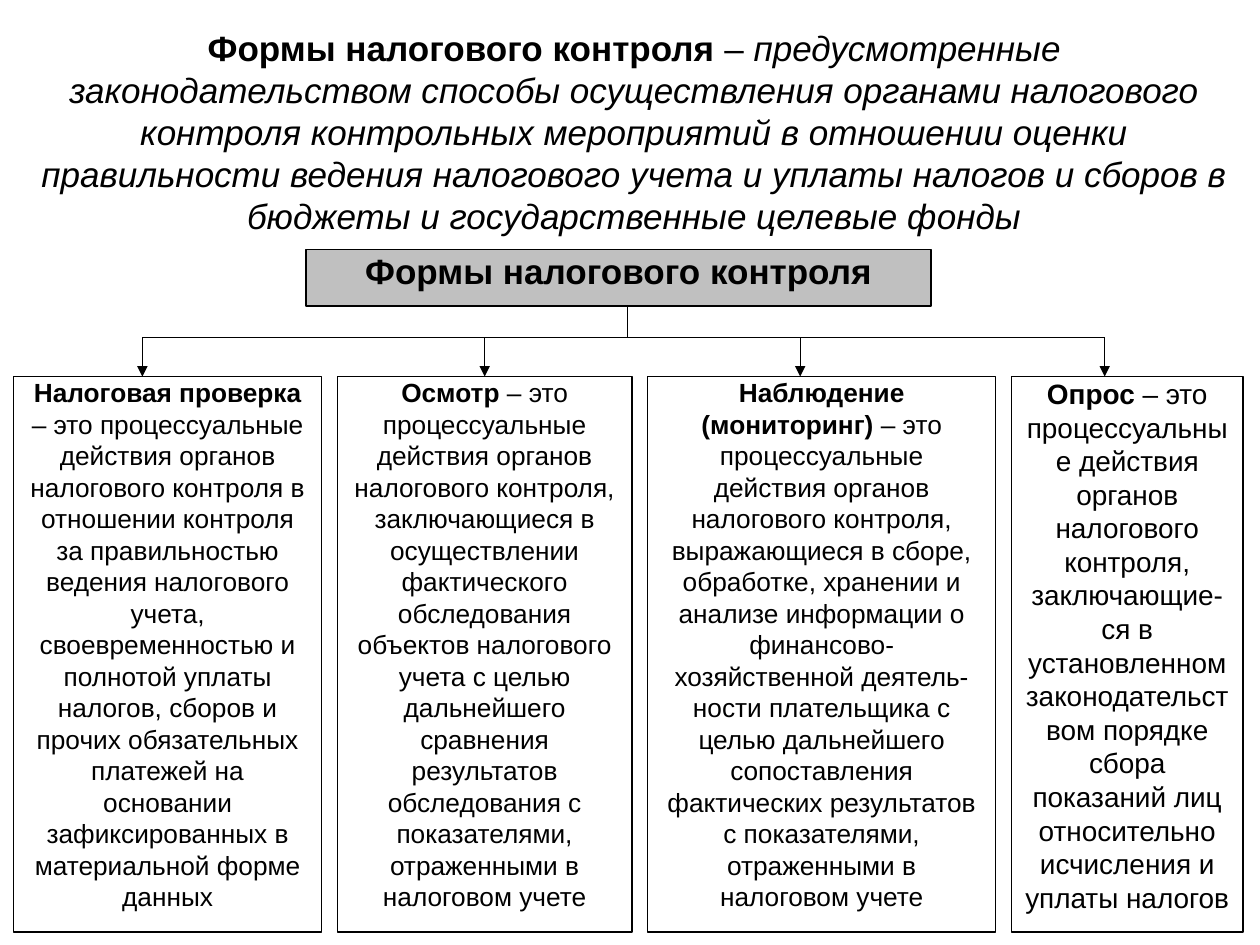
from dataclasses import dataclass

from lxml import etree
from pptx import Presentation
from pptx import util as u
from pptx.dml.color import RGBColor
from pptx.enum import shapes, text
from pptx.oxml.ns import qn


@dataclass(frozen=True)
class Theme:
    font: str = "Arial"
    ink: RGBColor = RGBColor(0, 0, 0)
    paper: RGBColor = RGBColor(255, 255, 255)
    heading_fill: RGBColor = RGBColor(0xC0, 0xC0, 0xC0)
    heading_size: int = 20
    line_width: float = 0.75


@dataclass(frozen=True)
class Form:
    name: str
    definition: str
    width: float
    size: int = 15
    drop: float | None = None  # arrow position; None means the middle of the box


THEME = Theme()
TITLE = "Формы налогового контроля"
TITLE_DEFINITION = (
    "предусмотренные законодательством способы осуществления органами налогового "
    "контроля контрольных мероприятий в отношении оценки правильности ведения "
    "налогового учета и уплаты налогов и сборов в бюджеты и государственные целевые фонды")
FORMS = [
    Form("Налоговая проверка",
         " – это процессуальные действия органов налогового контроля в отношении "
         "контроля за правильностью ведения налогового учета, своевременностью и "
         "полнотой уплаты налогов, сборов и прочих обязательных платежей на основании "
         "зафиксированных в материальной форме данных", 6.2, drop=2.87),
    Form("Осмотр",
         " – это процессуальные действия органов налогового контроля, заключающиеся в "
         "осуществлении фактического обследования объектов налогового учета с целью "
         "дальнейшего сравнения результатов обследования с показателями, отраженными "
         "в налоговом учете", 5.94),
    Form("Наблюдение (мониторинг)",
         " – это процессуальные действия органов налогового контроля, выражающиеся в "
         "сборе, обработке, хранении и анализе информации о финансово-хозяйственной "
         "деятель-ности плательщика с целью дальнейшего сопоставления фактических "
         "результатов с показателями, отраженными в налоговом учете", 7.01, drop=16.13),
    Form("Опрос",
         " – это процессуальные действия органов налогового контроля, заключающие-ся в "
         "установленном законодательством порядке сбора показаний лиц относительно "
         "исчисления и уплаты налогов", 4.67, size=16, drop=22.27),
]


def write(frame, spans, size):
    """Fill the frame with one centred paragraph of (text, bold, italic) spans."""
    para = frame.paragraphs[0]
    para.alignment = text.PP_ALIGN.CENTER
    para.font.name = THEME.font
    para.font.size = u.Pt(size)
    para.font.color.rgb = THEME.ink
    for words, bold, italic in spans:
        span = para.add_run()
        span.text = words
        span.font.bold = bold
        span.font.italic = italic


def add_title(page, left, top, width, height):
    title = page.shapes.title
    title.left, title.top = u.Cm(left), u.Cm(top)
    title.width, title.height = u.Cm(width), u.Cm(height)
    frame = title.text_frame
    frame.auto_size = text.MSO_AUTO_SIZE.NONE
    frame.vertical_anchor = text.MSO_ANCHOR.MIDDLE
    write(frame, [(TITLE + " ", True, False), ("– ", False, False),
                  (TITLE_DEFINITION, False, True)], THEME.heading_size)


def add_box(page, left, top, width, height, fill, spans, size):
    box = page.shapes.add_shape(shapes.MSO_SHAPE.RECTANGLE, u.Cm(left), u.Cm(top),
                                u.Cm(width), u.Cm(height))
    box.shadow.inherit = False
    box.fill.solid()
    box.fill.fore_color.rgb = fill
    box.line.color.rgb = THEME.ink
    box.line.width = u.Pt(THEME.line_width)
    frame = box.text_frame
    frame.word_wrap = True
    frame.vertical_anchor = text.MSO_ANCHOR.TOP
    frame.margin_top = frame.margin_bottom = 0
    write(frame, spans, size)
    return box


def add_line(page, start_x, start_y, end_x, end_y, arrow=False):
    line = page.shapes.add_connector(shapes.MSO_CONNECTOR.STRAIGHT, u.Cm(start_x),
                                     u.Cm(start_y), u.Cm(end_x), u.Cm(end_y))
    line.line.color.rgb = THEME.ink
    line.line.width = u.Pt(THEME.line_width)
    if arrow:
        etree.SubElement(line.line._get_or_add_ln(), qn("a:tailEnd"), type="triangle")
    etree.SubElement(line._element.spPr, qn("a:effectLst"))
    return line


def add_forms_tree(page, left, top, height):
    """Draw the heading, the rail below it and one box for each form."""
    heading_left, heading_height = left + 5.89, 1.14
    rail_y, boxes_top, gap = top + 1.78, top + 2.56, 0.32
    stem_x = 12.65

    add_box(page, heading_left, top, 12.6, heading_height, THEME.heading_fill,
            [(TITLE, True, False)], THEME.heading_size)
    add_line(page, stem_x, top + heading_height, stem_x, rail_y)
    add_line(page, FORMS[0].drop, rail_y, FORMS[-1].drop, rail_y)

    for form in FORMS:
        box = add_box(page, left, boxes_top, form.width, top + height - boxes_top,
                      THEME.paper, [(form.name, True, False),
                                    (form.definition, False, False)], form.size)
        drop = left + form.width / 2 if form.drop is None else form.drop
        arrow = add_line(page, drop, rail_y, drop, boxes_top, arrow=True)
        if form.drop is None:
            arrow.end_connect(box, 0)
        left += form.width + gap


def main():
    deck = Presentation()
    deck.slide_width, deck.slide_height = u.Cm(25.4), u.Cm(19.05)
    page = deck.slides.add_slide(deck.slide_layouts.get_by_name("Title Only"))
    add_title(page, 0.53, 0.41, 24.51, 4.47)
    add_forms_tree(page, left=0.28, top=5.03, height=13.76)
    deck.save("out.pptx")


if __name__ == "__main__":
    main()
